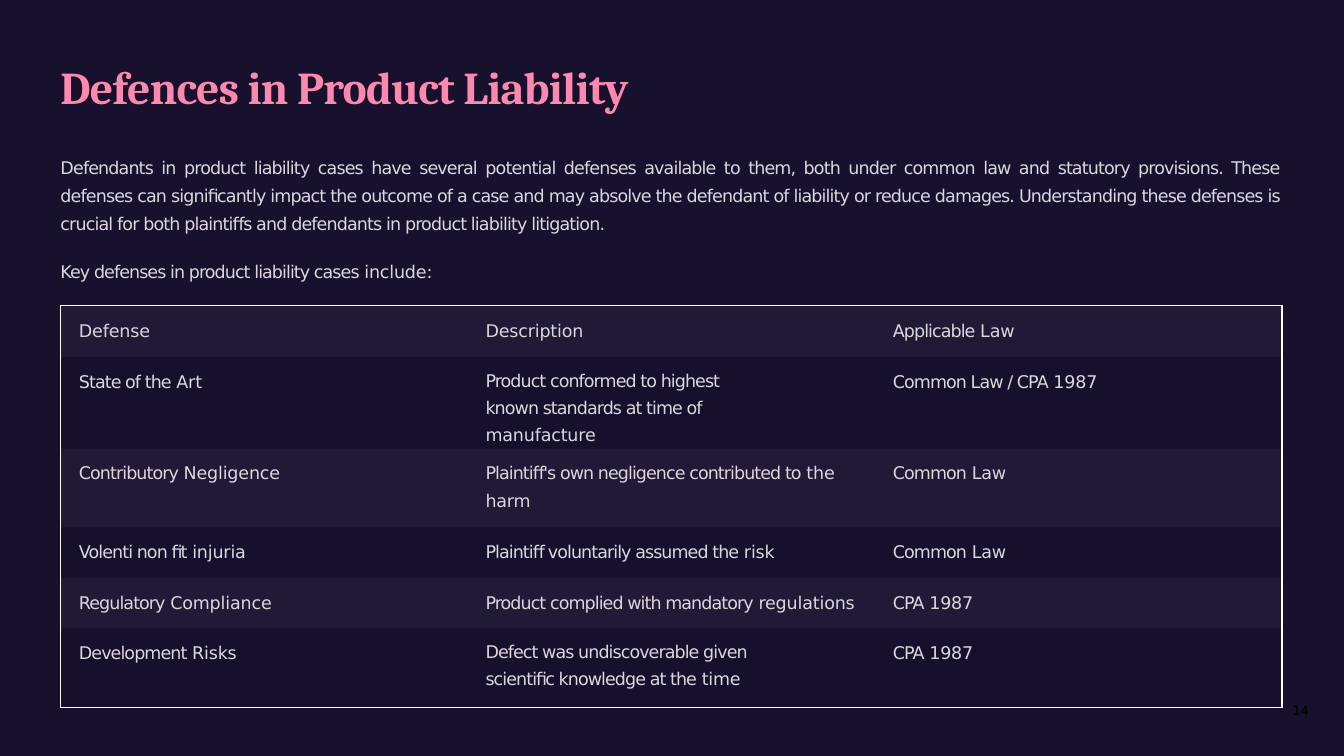
from lxml import etree
from pptx import Presentation
from pptx.dml.color import RGBColor
from pptx.enum.text import PP_ALIGN
from pptx.oxml.ns import qn
from pptx.util import Inches, Pt

JUSTIFY, LEFT = PP_ALIGN.JUSTIFY, PP_ALIGN.LEFT
NIGHT = RGBColor(0x17, 0x11, 0x2E)
PINK = RGBColor(0xFF, 0x89, 0xAE)
MIST = RGBColor(0xDF, 0xD5, 0xDE)
WHITE = RGBColor(0xFF, 0xFF, 0xFF)
BLACK = RGBColor(0x00, 0x00, 0x00)

SERIF, SANS = "Cambria", "DejaVu Sans"
TEXT_SIZE = 15
TIGHT, LOOSE = -0.8, -0.15
LINE_SPACING = 1.33
BAND_OPACITY = 4
PLAIN_TABLE_STYLE = "{2D5ABB26-0587-4C30-8999-92F81FD0307C}"

TITLE = "Defences in Product Liability"
INTRO = (
    "Defendants in product liability cases have several potential defenses available to them, "
    "both under common law and statutory provisions. These defenses can significantly impact "
    "the outcome of a case and may absolve the defendant of liability or reduce damages. "
    "Understanding these defenses is crucial for both plaintiffs and defendants in product "
    "liability litigation."
)
LEAD_IN = "Key defenses in product liability cases include:"
DEFENSES = [
    ("Defense", "Description", "Applicable Law"),
    ("State of the Art", "Product conformed to highest known standards at time of manufacture",
     "Common Law / CPA 1987"),
    ("Contributory Negligence", "Plaintiff's own negligence contributed to the\nharm",
     "Common Law"),
    ("Volenti non fit injuria", "Plaintiff voluntarily assumed the risk", "Common Law"),
    ("Regulatory Compliance", "Product complied with mandatory regulations", "CPA 1987"),
    ("Development Risks", "Defect was undiscoverable given scientific knowledge at the time",
     "CPA 1987"),
]
COLUMN_WIDTHS = (3.8, 5.83, 4.91)
COLUMN_INDENTS = (0.22, 1.26, 0.28)
ROW_HEIGHTS = (0.61, 1.09, 0.94, 0.6, 0.6, 0.94)
WRAPPED_CELLS = {(1, 1), (5, 1)}


def add_span(para, text, spacing, size=TEXT_SIZE, font=SANS, color=MIST, bold=False):
    """Add a run whose letter spacing is given in points."""
    span = para.add_run()
    span.text = text
    span.font.name, span.font.size, span.font.bold = font, Pt(size), bold
    span.font.color.rgb = color
    span.font._element.set("spc", str(round(spacing * 100)))


def add_phrase(para, text):
    """Set all words tight except the last one."""
    lead, gap, last = text.rpartition(" ")
    if lead:
        add_span(para, lead + gap, TIGHT)
    add_span(para, last, LOOSE)


def add_text_frame(page, box):
    frame = page.shapes.add_textbox(*(Inches(length) for length in box)).text_frame
    frame.word_wrap = True
    frame.margin_left = frame.margin_right = frame.margin_bottom = 0
    frame.margin_top = Inches(0.01)
    return frame


def add_title(page, box):
    para = add_text_frame(page, box).paragraphs[0]
    para.space_before = Pt(1)
    add_span(para, TITLE, -0.6, 39, SERIF, PINK, True)


def add_introduction(page, box):
    frame = add_text_frame(page, box)
    intro, lead_in = frame.paragraphs[0], frame.add_paragraph()
    intro.alignment = lead_in.alignment = JUSTIFY
    intro.line_spacing = LINE_SPACING
    intro.space_before, lead_in.space_before = Pt(1), Pt(23)
    add_span(intro, INTRO, -0.75)
    add_phrase(lead_in, LEAD_IN)


def add_page_number(page, box):
    add_span(add_text_frame(page, box).paragraphs[0], "14", 0, 11, SANS, BLACK)


def set_border(cell, side, width):
    """Draw one white cell edge; side is L, R, T or B."""
    line = etree.SubElement(cell._tc.get_or_add_tcPr(), qn(f"a:ln{side}"), w=str(Pt(width)))
    fill = etree.SubElement(line, qn("a:solidFill"))
    etree.SubElement(fill, qn("a:srgbClr"), val=str(WHITE))


def set_band(cell, color):
    """Fill a cell with a faint veil of the colour."""
    cell.fill.solid()
    cell.fill.fore_color.rgb = color
    tint = cell._tc.tcPr.find(qn("a:solidFill")).find(qn("a:srgbClr"))
    etree.SubElement(tint, qn("a:alpha"), val=str(BAND_OPACITY * 1000))


def fill_cell(cell, text, indent, wrapped):
    cell.margin_left = Inches(indent)
    cell.margin_right = Inches(1.18 if wrapped else 0)
    cell.margin_top = Inches(0.09 if wrapped else 0.18)
    cell.margin_bottom = 0
    cell.text_frame.word_wrap = True
    for index, line in enumerate(text.split("\n")):
        para = cell.text_frame.add_paragraph() if index else cell.text_frame.paragraphs[0]
        para.alignment = LEFT
        if index:
            para.space_before = Pt(6)
        if wrapped:
            para.line_spacing = LINE_SPACING
        add_phrase(para, line)


def add_defense_table(page, left, top):
    last_row, last_column = len(DEFENSES) - 1, len(COLUMN_WIDTHS) - 1
    table = page.shapes.add_table(
        len(DEFENSES), len(COLUMN_WIDTHS), Inches(left), Inches(top),
        Inches(sum(COLUMN_WIDTHS)), Inches(sum(ROW_HEIGHTS))).table
    table.first_row = table.horz_banding = False
    table._tbl.tblPr.find(qn("a:tableStyleId")).text = PLAIN_TABLE_STYLE
    for column, width in zip(table.columns, COLUMN_WIDTHS):
        column.width = Inches(width)
    for row_index, texts in enumerate(DEFENSES):
        table.rows[row_index].height = Inches(ROW_HEIGHTS[row_index])
        for column_index, text in enumerate(texts):
            cell = table.cell(row_index, column_index)
            fill_cell(cell, text, COLUMN_INDENTS[column_index],
                      (row_index, column_index) in WRAPPED_CELLS)
            edges = (("L", 1.5, column_index == 0), ("R", 1.5, column_index == last_column),
                     ("T", 1, row_index == 0), ("B", 1, row_index == last_row))
            for side, width, is_outer in edges:
                if is_outer:
                    set_border(cell, side, width)
            set_band(cell, BLACK if row_index % 2 else WHITE)


def main():
    deck = Presentation()
    deck.slide_width, deck.slide_height = Inches(16), Inches(9)
    page = deck.slides.add_slide(deck.slide_layouts[6])
    page.background.fill.solid()
    page.background.fill.fore_color.rgb = NIGHT
    left = 0.72
    add_title(page, (left, 0.69, 7.03, 0.67))
    add_introduction(page, (left, 1.78, 14.52, 1.6))
    add_defense_table(page, left, 3.64)
    add_page_number(page, (15.39, 8.36, 0.4, 0.2))
    deck.save("out.pptx")


if __name__ == "__main__":
    main()
